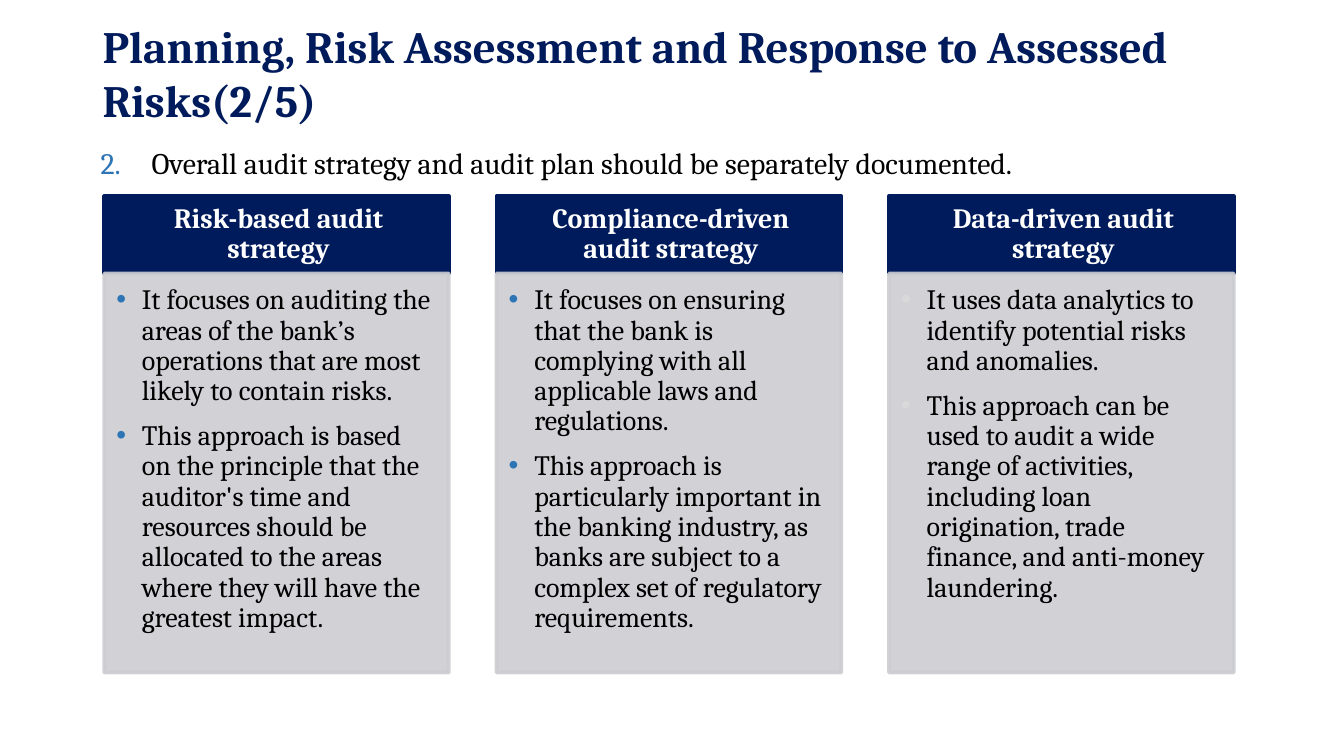
from lxml import etree
from pptx import Presentation
from pptx import util as u
from pptx.dml.color import RGBColor
from pptx.enum import shapes, text
from pptx.oxml.ns import qn

PX = 4572
FONT = "Cambria"
NAVY, BLUE, GREY, PALE = "001B5C", "2E75B6", "CCCDD2", "D9D9D9"
BLACK, WHITE = "000000", "FFFFFF"

STRATEGIES = [
    ("Risk-based audit strategy", BLUE, [
        "It focuses on auditing the areas of the bank’s operations that are "
        "most likely to contain risks.",
        "This approach is based on the principle that the auditor's time and "
        "resources should be allocated to the areas where they will have the "
        "greatest impact."]),
    ("Compliance-driven audit strategy", BLUE, [
        "It focuses on ensuring that the bank is complying with all "
        "applicable laws and regulations.",
        "This approach is particularly important in the banking industry, as "
        "banks are subject to a complex set of regulatory requirements."]),
    ("Data-driven audit strategy", PALE, [
        "It uses data analytics to identify potential risks and anomalies.",
        "This approach can be used to audit a wide range of activities, "
        "including loan origination, trade finance, and anti-money "
        "laundering."]),
]


def px(length):
    """Turn whole pixels into EMU."""
    return u.Emu(length * PX)


def paint(color_format, color):
    """Set a colour from a hex string."""
    color_format.rgb = RGBColor.from_string(color)


def style(para, size, color, bold=False):
    """Format every run of a paragraph."""
    for span in para.runs:
        span.font.name = FONT
        span.font.size = u.Pt(size)
        span.font.bold = bold
        paint(span.font.color, color)


def add_marker(para, color, indent, face, tag, **attributes):
    """Give a paragraph a coloured bullet or number with a hanging indent."""
    props = para._p.get_or_add_pPr()
    props.set("marL", str(px(indent)))
    props.set("indent", str(-px(indent)))
    tint = etree.SubElement(props, qn("a:buClr"))
    etree.SubElement(tint, qn("a:srgbClr"), val=color)
    etree.SubElement(props, qn("a:buFont"), typeface=face)
    etree.SubElement(props, qn(tag), **attributes)


def add_text(page, left, top, width, height, words):
    """Add a wrapping text box and return its first paragraph."""
    box = page.shapes.add_textbox(px(left), px(top), px(width), px(height))
    box.text_frame.word_wrap = True
    box.text_frame.text = words
    return box.text_frame.paragraphs[0]


def add_panel(page, left, top, width, height, color, insets, anchor):
    """Add a filled rectangle and return it ready for text."""
    box = page.shapes.add_shape(
        shapes.MSO_SHAPE.RECTANGLE, px(left), px(top), px(width), px(height))
    box.shadow.inherit = False
    box.fill.solid()
    paint(box.fill.fore_color, color)
    box.line.width = u.Pt(2)
    paint(box.line.color, color)
    frame = box.text_frame
    frame.word_wrap = True
    frame.vertical_anchor = anchor
    frame.margin_left, frame.margin_top, frame.margin_right, frame.margin_bottom = map(px, insets)
    return box


def add_strategy(page, left, top, width, height, heading, marker, points):
    """Draw one strategy column: a heading band above a bulleted panel."""
    band = 115
    header = add_panel(page, left, top, width, band, NAVY, (30, 13, 24, 15),
                       text.MSO_ANCHOR.MIDDLE)
    header.text_frame.text = heading
    para = header.text_frame.paragraphs[0]
    para.alignment = text.PP_ALIGN.CENTER
    para.line_spacing = 0.9
    style(para, 15, WHITE, bold=True)

    body = add_panel(page, left, top + band, width, height - band, GREY,
                     (18, 18, 24, 26), text.MSO_ANCHOR.TOP)
    for tint in body._element.spPr.iter(qn("a:srgbClr")):
        etree.SubElement(tint, qn("a:alpha"), val="90000")
    frame = body.text_frame
    for number, point in enumerate(points):
        para = frame.add_paragraph() if number else frame.paragraphs[0]
        para.text = point
        add_marker(para, marker, 38, "Arial", "a:buChar", char="•")
        para.level = 1
        para.alignment = text.PP_ALIGN.LEFT
        para.line_spacing = 0.9
        para.space_after = u.Pt(8)
        style(para, 15, BLACK)


def add_heading(page, left, top, width, height):
    """Place the slide title and the numbered statement below it."""
    statement = add_text(page, left, top + 188, width, 74,
                         "Overall audit strategy and audit plan should be separately documented.")
    add_marker(statement, BLUE, 76, FONT, "a:buAutoNum", type="arabicPeriod", startAt="2")
    statement.alignment = text.PP_ALIGN.JUSTIFY
    style(statement, 16, BLACK)
    title = add_text(page, left + 3, top, width - 28, height,
                     "Planning, Risk Assessment and Response to Assessed Risks(2/5)")
    style(title, 24, NAVY, bold=True)


def add_strategies(page, left, top, width, height):
    """Spread the strategy columns evenly over the given box."""
    column = 513
    step = (width - column) // (len(STRATEGIES) - 1)
    for number, strategy in enumerate(STRATEGIES):
        add_strategy(page, left + number * step, top, column, height, *strategy)


def main():
    """Build and save the deck."""
    deck = Presentation()
    deck.slide_width, deck.slide_height = px(2000), px(1125)
    page = deck.slides.add_slide(deck.slide_layouts[6])
    add_heading(page, 130, 18, 1740, 262)
    add_strategies(page, 155, 292, 1681, 709)
    deck.save("out.pptx")


if __name__ == "__main__":
    main()
